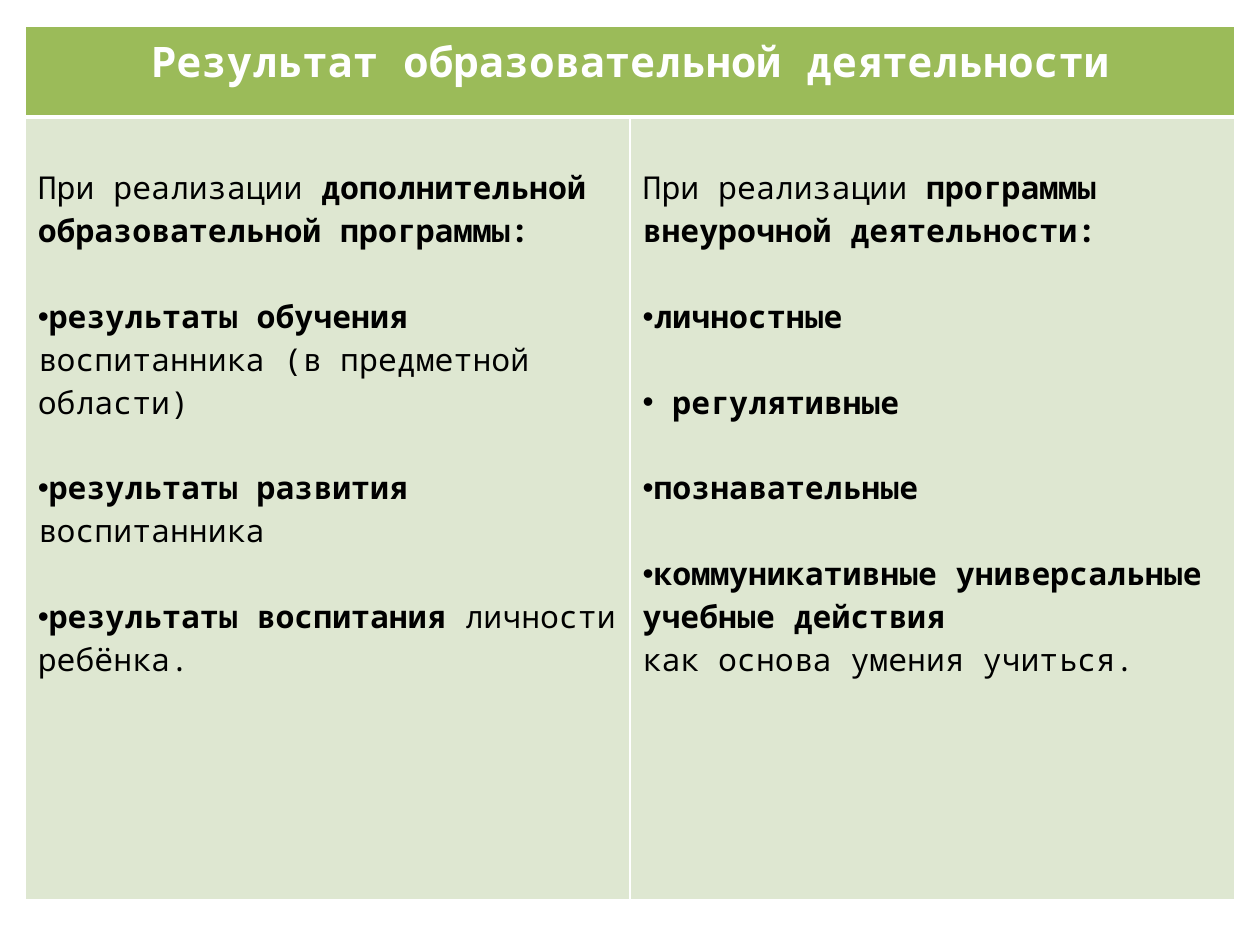
from lxml.etree import SubElement
from pptx import Presentation
from pptx.dml.color import RGBColor
from pptx.enum.text import PP_ALIGN
from pptx.oxml.ns import qn
from pptx.util import Inches, Pt

GREEN = RGBColor(0x9B, 0xBB, 0x59)
PALE_GREEN = RGBColor(0xDE, 0xE7, 0xD1)
WHITE = RGBColor(0xFF, 0xFF, 0xFF)
BLACK = RGBColor(0, 0, 0)

HEADING = "Результат образовательной деятельности"

# Each paragraph: (bulleted, gap before, [(text, bold), ...])
PROGRAMME = [
    (False, False, [("При реализации ", False),
                    ("дополнительной образовательной программы:", True)]),
    (True, True, [("результаты обучения", True),
                  (" воспитанника (в предметной области)", False)]),
    (True, True, [("результаты развития", True), (" воспитанника", False)]),
    (True, True, [("результаты воспитания", True), (" личности ребёнка.", False)]),
]
EXTRACURRICULAR = [
    (False, False, [("При реализации ", False),
                    ("программы внеурочной деятельности:", True)]),
    (True, True, [("личностные", True)]),
    (True, True, [(" ", False), ("регулятивные", True)]),
    (True, True, [("познавательные", True)]),
    (True, True, [("коммуникативные универсальные учебные действия", True)]),
    (False, False, [("как основа умения учиться.", False)]),
]


class SlideBuilder:
    font = "Noto Sans Mono"
    heading_size = Pt(24)
    body_size = Pt(18)
    line_gap = Pt(24.5)  # one line of body text

    def __init__(self, prs):
        self.slide = prs.slides.add_slide(prs.slide_layouts[6])

    def table(self, left, top, col_widths, row_heights):
        table = self.slide.shapes.add_table(
            len(row_heights), len(col_widths), Inches(left), Inches(top),
            Inches(sum(col_widths)), Inches(sum(row_heights))).table
        for column, width in zip(table.columns, col_widths):
            column.width = Inches(width)
        for row, height in zip(table.rows, row_heights):
            row.height = Inches(height)
        return table

    def cell_style(self, cell, fill, top=1, bottom=1):
        tc_pr = cell._tc.get_or_add_tcPr()
        for side, width in (("L", 1), ("R", 1), ("T", top), ("B", bottom)):
            line = SubElement(tc_pr, qn(f"a:ln{side}"), w=str(Pt(width)))
            solid = SubElement(line, qn("a:solidFill"))
            SubElement(solid, qn("a:srgbClr"), val=str(WHITE))
        cell.fill.solid()
        cell.fill.fore_color.rgb = fill

    def run(self, p, text, size, color, bold):
        r = p.add_run()
        r.text = text
        r.font.name = self.font
        r.font.size = size
        r.font.bold = bold
        r.font.color.rgb = color

    def bullet(self, p):
        p_pr = p._p.get_or_add_pPr()
        p_pr.set("marL", "0")
        p_pr.set("indent", "0")
        SubElement(p_pr, qn("a:buFont"), typeface="Arial")
        SubElement(p_pr, qn("a:buChar"), char="•")

    def heading(self, cell, text):
        p = cell.text_frame.paragraphs[0]
        p.alignment = PP_ALIGN.CENTER
        self.run(p, text, self.heading_size, WHITE, True)

    def body(self, cell, paragraphs):
        cell.margin_top = Inches(0.39)
        tf = cell.text_frame
        for i, (bulleted, gap, runs) in enumerate(paragraphs):
            p = tf.add_paragraph() if i else tf.paragraphs[0]
            if gap:
                p.space_before = self.line_gap
            if bulleted:
                self.bullet(p)
            for text, bold in runs:
                self.run(p, text, self.body_size, BLACK, bold)


def main():
    prs = Presentation()
    prs.slide_width, prs.slide_height = Inches(10), Inches(7.5)
    s = SlideBuilder(prs)
    table = s.table(0.2, 0.21, [4.8, 4.8], [0.72, 6.21])

    # Fills and borders, with a thick rule under the heading
    for col in range(2):
        s.cell_style(table.cell(0, col), GREEN, bottom=3)
        s.cell_style(table.cell(1, col), PALE_GREEN, top=3)

    # Heading across both columns
    table.cell(0, 0).merge(table.cell(0, 1))
    s.heading(table.cell(0, 0), HEADING)

    # Two columns of results
    for col, paragraphs in enumerate((PROGRAMME, EXTRACURRICULAR)):
        s.body(table.cell(1, col), paragraphs)

    prs.save("out.pptx")


if __name__ == "__main__":
    main()
